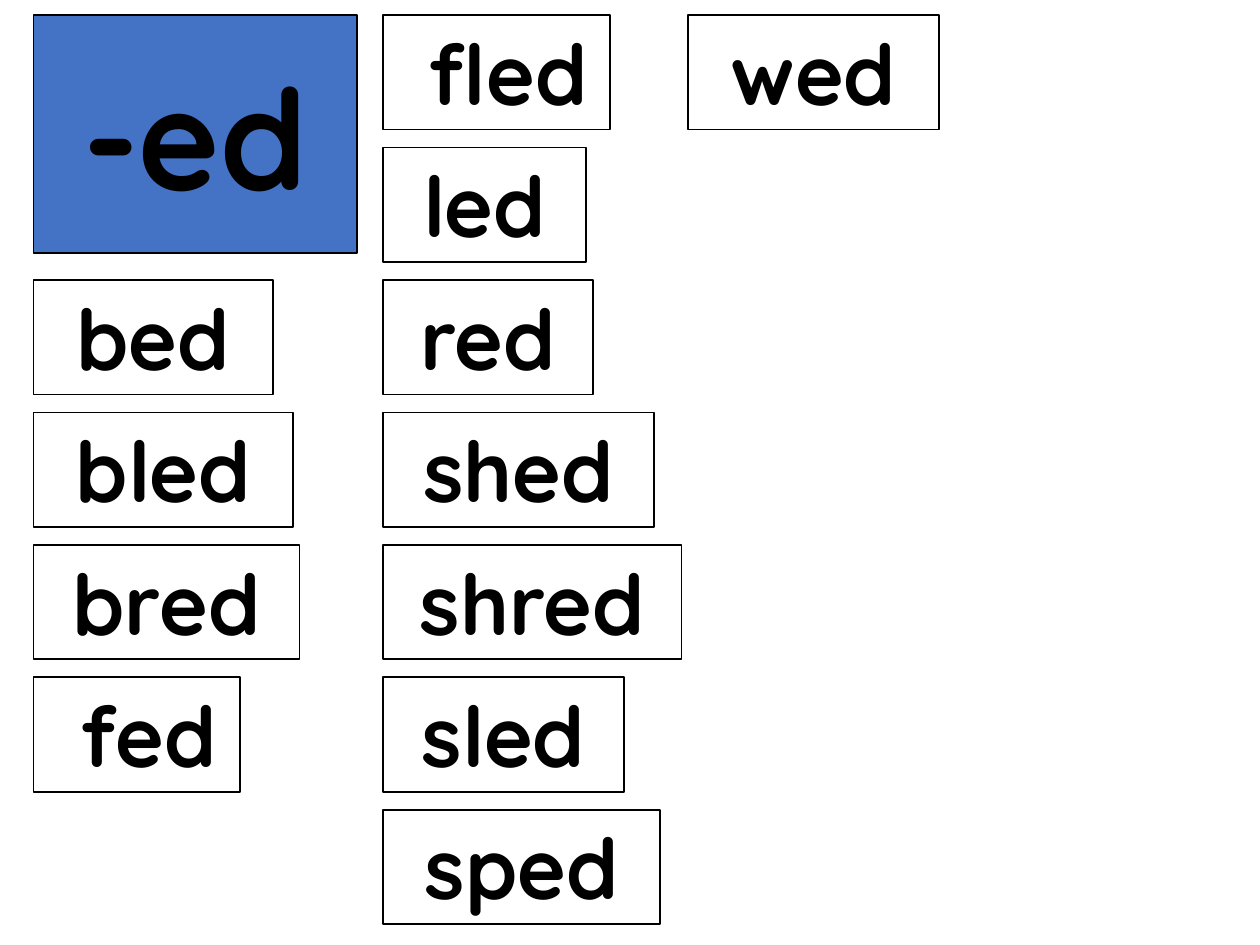
import dataclasses

import pptx
import pptx.dml.color
import pptx.enum.shapes
import pptx.enum.text
import pptx.util

Pt = pptx.util.Pt
RGB = pptx.dml.color.RGBColor


@dataclasses.dataclass(frozen=True)
class Theme:
    font: str = "Quicksand"
    ink: RGB = RGB(0x00, 0x00, 0x00)
    card: RGB = RGB(0xFF, 0xFF, 0xFF)
    accent: RGB = RGB(0x44, 0x72, 0xC4)
    word_size: int = 48
    ending_size: int = 80


THEME = Theme()
TOP = 8.64
ROW_PITCH = 75.68
CARD_HEIGHT = 65.4
LEFT_COLUMN, MIDDLE_COLUMN, RIGHT_COLUMN = 19.2, 218.9, 393.1

# Column left edge, first row, then each word with its card width
WORD_COLUMNS = [
    (RIGHT_COLUMN, 0, [("wed", 143.3)]),
    (MIDDLE_COLUMN, 0, [("fled", 129.6), ("led", 116), ("red", 120.2),
                        ("shed", 154.8), ("shred", 170.6),
                        ("sled", 137.5), ("sped", 158.4)]),
    (LEFT_COLUMN, 2, [("bed", 136.8), ("bled", 148.3),
                      ("bred", 152), ("fed", 118.1)]),
]


def add_card(slide, text, left, top, width, height, fill, size):
    card = slide.shapes.add_shape(
        pptx.enum.shapes.MSO_SHAPE.RECTANGLE,
        Pt(left), Pt(top), Pt(width), Pt(height))
    card.shadow.inherit = False
    card.fill.solid()
    card.fill.fore_color.rgb = fill
    card.line.color.rgb = THEME.ink
    card.line.width = Pt(1)

    paragraph = card.text_frame.paragraphs[0]
    paragraph.text = text
    paragraph.alignment = pptx.enum.text.PP_ALIGN.CENTER
    paragraph.font.name = THEME.font
    paragraph.font.size = Pt(size)
    paragraph.font.bold = True
    paragraph.font.color.rgb = THEME.ink
    return card


def add_word_card(slide, word, left, row, width):
    """Add a white card that fits its word, with a space on each side."""
    card = add_card(slide, f" {word} ", left, TOP + row * ROW_PITCH,
                    width, CARD_HEIGHT, THEME.card, THEME.word_size)
    frame = card.text_frame
    frame.word_wrap = False
    frame.auto_size = pptx.enum.text.MSO_AUTO_SIZE.SHAPE_TO_FIT_TEXT
    frame.vertical_anchor = pptx.enum.text.MSO_ANCHOR.TOP


def add_ending_card(slide):
    card = add_card(slide, "-ed", LEFT_COLUMN, TOP, 185, 136,
                    THEME.accent, THEME.ending_size)
    card.text_frame.vertical_anchor = pptx.enum.text.MSO_ANCHOR.MIDDLE


def main():
    deck = pptx.Presentation()
    deck.slide_width, deck.slide_height = Pt(720), Pt(540)
    slide = deck.slides.add_slide(deck.slide_layouts[6])
    for left, first_row, words in WORD_COLUMNS:
        for row, (word, width) in enumerate(words, first_row):
            add_word_card(slide, word, left, row, width)
    add_ending_card(slide)
    deck.save("out.pptx")


if __name__ == "__main__":
    main()
